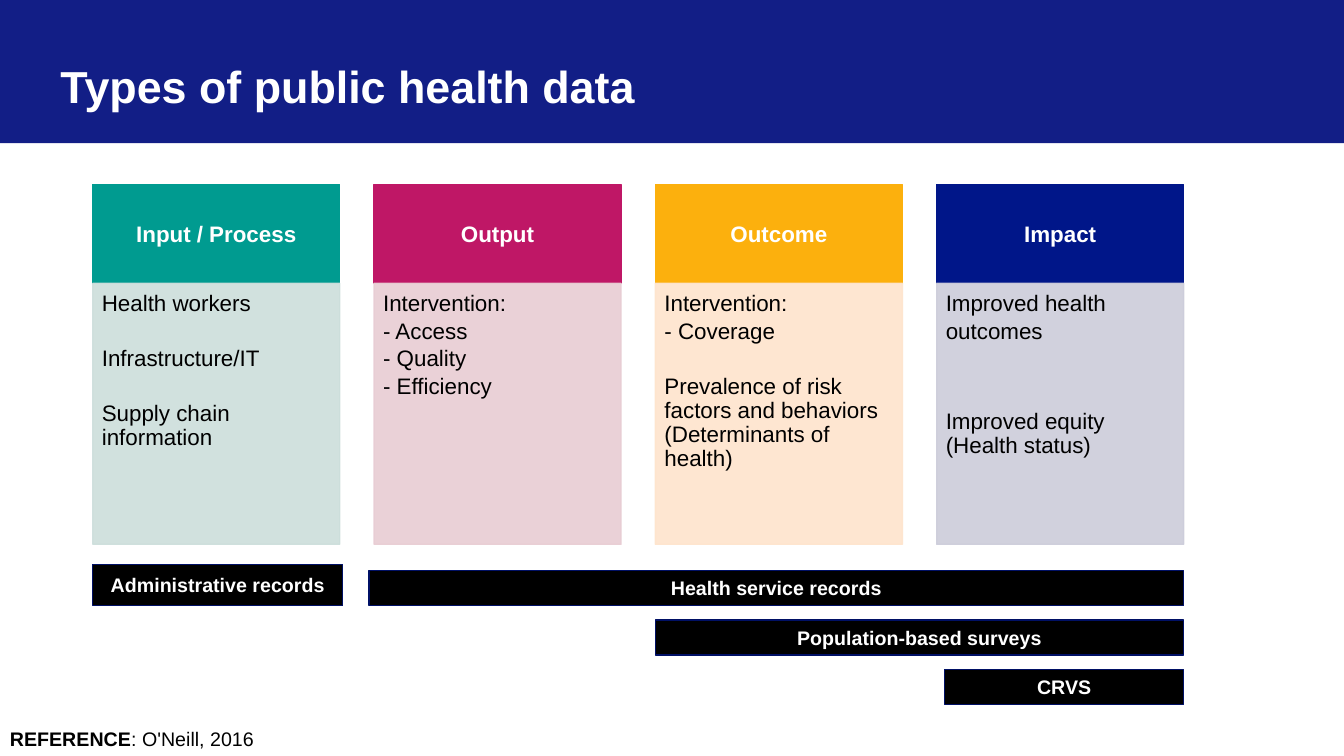
"""Build the slide on types of public health data."""
from dataclasses import dataclass

from lxml.etree import SubElement
from pptx import Presentation
from pptx.dml.color import RGBColor
from pptx.enum.shapes import MSO_SHAPE as Shape
from pptx.enum.text import MSO_ANCHOR as Anchor, MSO_AUTO_SIZE as AutoSize, PP_ALIGN as Align
from pptx.oxml.ns import qn
from pptx.shapes.autoshape import Shape as AutoShape
from pptx.slide import Slide
from pptx.text.text import TextFrame, _Paragraph as Paragraph
from pptx.util import Inches, Pt

COLORS = {
    "banner": "121E86", "white": "FFFFFF", "black": "000000", "bar_line": "001065",
    "teal": "009B90", "pale_teal": "CCDEDB",
    "pink": "BF1766", "pale_pink": "E8CCD3",
    "amber": "FCB00D", "pale_amber": "FEE4CC",
    "navy": "001689", "pale_navy": "CCCCDA",
}
FONT = "Arial"
GRID_LEFT, COLUMN_STEP, COLUMN_WIDTH = 0.92, 2.79, 2.45
HEAD_TOP, HEAD_HEIGHT, BODY_HEIGHT = 1.83, 0.98, 2.59
BAR_BOTTOM, BAR_STEP = 6.01, 0.49
LINE_GAP, BLOCK_GAP, WIDE_GAP = 2.4, 22, 47


@dataclass(frozen=True)
class Line:
    text: str
    gap: float = LINE_GAP


@dataclass(frozen=True)
class Stage:
    name: str
    color: str
    lines: tuple[Line, ...]


@dataclass(frozen=True)
class RecordBar:
    label: str
    first: int
    last: int
    row: int
    height: float = 0.35
    left_shift: float = 0
    right_shift: float = 0


STAGES = (
    Stage("Input / Process", "teal", (
        Line("Health workers"),
        Line("Infrastructure/IT", BLOCK_GAP),
        Line("Supply chain information", BLOCK_GAP),
    )),
    Stage("Output", "pink", (
        Line("Intervention:"), Line("- Access"), Line("- Quality"), Line("- Efficiency"),
    )),
    Stage("Outcome", "amber", (
        Line("Intervention:"),
        Line("- Coverage"),
        Line("Prevalence of risk factors and behaviors (Determinants of health)", BLOCK_GAP),
    )),
    Stage("Impact", "navy", (
        Line("Improved health"),
        Line("outcomes"),
        Line("Improved equity (Health status)", WIDE_GAP),
    )),
)
RECORD_BARS = (
    RecordBar("Administrative records", 0, 0, 0, height=0.41, right_shift=0.03),
    RecordBar("CRVS", 3, 3, 2, left_shift=0.08),
    RecordBar("Health service records", 1, 3, 0, left_shift=-0.05),
    RecordBar("Population-based surveys", 2, 3, 1),
)


def rgb(name: str) -> RGBColor:
    """Look up a palette colour."""
    return RGBColor.from_string(COLORS[name])


def column_left(column: int) -> float:
    """Return the left edge of a grid column in inches."""
    return GRID_LEFT + column * COLUMN_STEP


def add_span(para: Paragraph, text: str, size: float, color: str, bold: bool = False) -> None:
    """Append one formatted run."""
    span = para.add_run()
    span.text = text
    span.font.name, span.font.size, span.font.bold = FONT, Pt(size), bold
    span.font.color.rgb = rgb(color)


def set_frame(frame: TextFrame, anchor: Anchor, insets: tuple[float, float, float, float]) -> None:
    """Set wrapping, anchor and insets (left, top, right, bottom)."""
    frame.word_wrap = True
    frame.vertical_anchor = anchor
    frame.margin_left, frame.margin_top, frame.margin_right, frame.margin_bottom = map(Inches, insets)


def add_block(page: Slide, left: float, top: float, width: float, height: float,
              fill: str, line: str) -> AutoShape:
    """Add a flat rectangle."""
    box = page.shapes.add_shape(Shape.RECTANGLE, *map(Inches, (left, top, width, height)))
    box.shadow.inherit = False
    box.fill.solid()
    box.fill.fore_color.rgb = rgb(fill)
    box.line.color.rgb = rgb(line)
    box.line.width = Pt(1)
    return box


def add_label(box: AutoShape, text: str, size: float) -> None:
    """Centre a bold white label in a rectangle."""
    set_frame(box.text_frame, Anchor.MIDDLE, (0.1, 0.05, 0.1, 0.05))
    para = box.text_frame.paragraphs[0]
    para.alignment = Align.CENTER
    add_span(para, text, size, "white", bold=True)


def add_title(page: Slide, width: int) -> None:
    """Turn the title placeholder into the banner."""
    title = page.shapes.title
    title.left, title.top, title.width, title.height = 0, 0, width, Inches(1.42)
    title.fill.solid()
    title.fill.fore_color.rgb = rgb("banner")
    frame = title.text_frame
    frame.auto_size = AutoSize.NONE
    set_frame(frame, Anchor.BOTTOM, (0.6, 0.05, 0.1, 0.3))
    para = frame.paragraphs[0]
    para.alignment, para.line_spacing = Align.LEFT, 0.9
    add_span(para, "Types of public health data", 32, "white", bold=True)


def add_stage(page: Slide, column: int, stage: Stage) -> None:
    """Add a heading block and the translucent body below it."""
    left = column_left(column)
    head = add_block(page, left, HEAD_TOP, COLUMN_WIDTH, HEAD_HEIGHT, stage.color, stage.color)
    add_label(head, stage.name, 16)
    pale = f"pale_{stage.color}"
    body = add_block(page, left, HEAD_TOP + HEAD_HEIGHT, COLUMN_WIDTH, BODY_HEIGHT, pale, pale)
    for color in body.element.spPr.iter(qn("a:srgbClr")):
        SubElement(color, qn("a:alpha"), val="90000")
    frame = body.text_frame
    set_frame(frame, Anchor.TOP, (0.09, 0.09, 0.12, 0.14))
    for index, line in enumerate(stage.lines):
        para = frame.add_paragraph() if index else frame.paragraphs[0]
        para.alignment, para.line_spacing = Align.LEFT, 0.9
        para.space_before = Pt(line.gap if index else 0)
        add_span(para, line.text, 16, "black")


def add_record_bar(page: Slide, bar: RecordBar) -> None:
    """Add a data source bar below the columns it covers."""
    left = column_left(bar.first) + bar.left_shift
    right = column_left(bar.last) + COLUMN_WIDTH + bar.right_shift
    top = BAR_BOTTOM + bar.row * BAR_STEP - bar.height
    box = add_block(page, left, top, right - left, bar.height, "black", "bar_line")
    add_label(box, bar.label, 14)


def add_reference(page: Slide) -> None:
    """Add the reference line at the bottom left."""
    box = page.shapes.add_textbox(*map(Inches, (0, 7.16, 2.9, 0.34)))
    set_frame(box.text_frame, Anchor.TOP, (0.1, 0.05, 0.1, 0.05))
    para = box.text_frame.paragraphs[0]
    add_span(para, "REFERENCE", 14, "black", bold=True)
    add_span(para, ": O'Neill, 2016", 14, "black")


def main() -> None:
    """Build and save the deck."""
    deck = Presentation()
    deck.slide_width, deck.slide_height = Inches(13.33), Inches(7.5)
    page = deck.slides.add_slide(deck.slide_layouts[5])
    add_title(page, deck.slide_width)
    for column, stage in enumerate(STAGES):
        add_stage(page, column, stage)
    for bar in RECORD_BARS:
        add_record_bar(page, bar)
    add_reference(page)
    deck.save("out.pptx")


if __name__ == "__main__":
    main()
